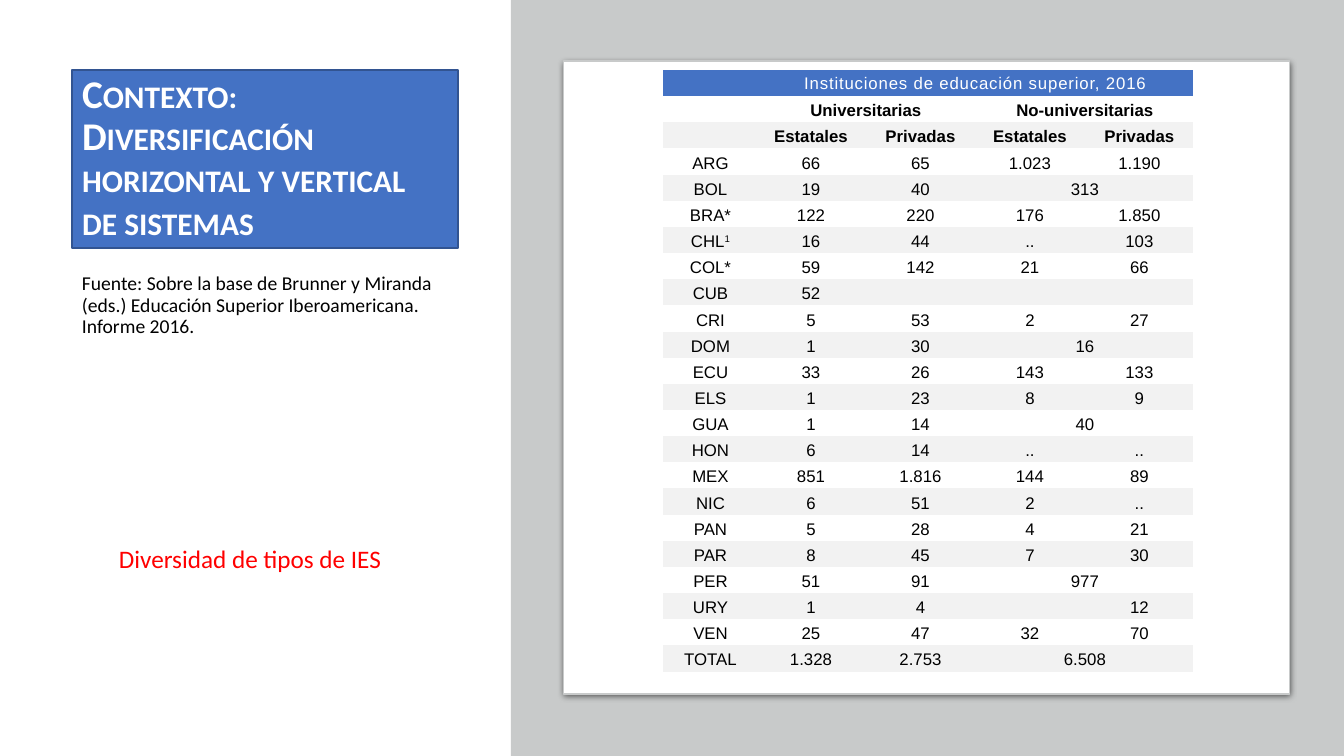
import pptx
import pptx.util
import pptx.dml.color
import pptx.enum.shapes
import pptx.enum.text
import pptx.oxml
import pptx.oxml.ns
from lxml import etree

PX = 914400 / 100.8
SHAPE = pptx.enum.shapes.MSO_SHAPE
ANCHOR = pptx.enum.text.MSO_ANCHOR
ALIGN = pptx.enum.text.PP_ALIGN
qn = pptx.oxml.ns.qn


def box(*lengths):
    """Turn px lengths into EMU."""
    return [pptx.util.Emu(round(n * PX)) for n in lengths]


def add_run(p, text, font, size, color, bold=False):
    r = p.add_run()
    r.text = text
    r.font.name = font
    r.font.size = pptx.util.Pt(size)
    r.font.bold = bold
    r.font.color.rgb = pptx.dml.color.RGBColor.from_string(color)
    return r


prs = pptx.Presentation()
prs.slide_width, prs.slide_height = box(1344, 756)
s = prs.slides.add_slide(prs.slide_layouts[5])

# Title
title = s.shapes.title
title.left, title.top, title.width, title.height = box(72, 70, 386, 178)
title.fill.solid()
title.fill.fore_color.rgb = pptx.dml.color.RGBColor.from_string("4472C4")
title.line.color.rgb = pptx.dml.color.RGBColor.from_string("325491")
title.line.width = pptx.util.Pt(1)
tf = title.text_frame
tf.word_wrap = True
tf.auto_size = pptx.enum.text.MSO_AUTO_SIZE.NONE
tf.vertical_anchor = ANCHOR.MIDDLE
p = tf.paragraphs[0]
p.alignment = ALIGN.LEFT
p.line_spacing = 0.9
r = add_run(p, "Contexto: Diversificación horizontal y vertical de sistemas",
            "Calibri", 28, "FFFFFF", True)
r.font._element.set("cap", "small")

# Source note
note = s.shapes.add_textbox(*box(72, 269, 386, 417))
note.text_frame.word_wrap = True
p = note.text_frame.paragraphs[0]
p.line_spacing = 0.9
p.space_after = pptx.util.Pt(6)
add_run(p, "Fuente: Sobre la base de Brunner y Miranda (eds.) Educación Superior "
        "Iberoamericana. Informe 2016.", "Calibri", 14, "000000")

# Grey panel and white card
panel = s.shapes.add_shape(SHAPE.RECTANGLE, *box(511, 0, 833, 756))
card = s.shapes.add_shape(SHAPE.ROUNDED_RECTANGLE, *box(564, 61, 726, 633))
card.adjustments[0] = 0
for sp, color in ((panel, "C8CACA"), (card, "FFFFFF")):
    sp.shadow.inherit = False
    sp.fill.solid()
    sp.fill.fore_color.rgb = pptx.dml.color.RGBColor.from_string(color)
panel.line.fill.background()
card.line.color.rgb = pptx.dml.color.RGBColor.from_string("C8CACA")
card.line.width = pptx.util.Pt(0.75)
effects = card._element.spPr.find(qn("a:effectLst"))
shadow = etree.SubElement(effects, qn("a:outerShdw"), blurRad="57150", dist="19050",
                          dir="5400000", algn="ctr", rotWithShape="0")
black = etree.SubElement(shadow, qn("a:srgbClr"), val="000000")
etree.SubElement(black, qn("a:alpha"), val="63000")

# Table: None continues the cell to its left
rows = [
    ["", "Instituciones de educación superior, 2016", None, None, None],
    ["", "Universitarias", None, "No-universitarias", None],
    ["", "Estatales", "Privadas", "Estatales", "Privadas"],
    ["ARG", "66", "65", "1.023", "1.190"],
    ["BOL", "19", "40", "313", None],
    ["BRA*", "122", "220", "176", "1.850"],
    ["CHL", "16", "44", "..", "103"],
    ["COL*", "59", "142", "21", "66"],
    ["CUB", "52", "", "", ""],
    ["CRI", "5", "53", "2", "27"],
    ["DOM", "1", "30", "16", None],
    ["ECU", "33", "26", "143", "133"],
    ["ELS", "1", "23", "8", "9"],
    ["GUA", "1", "14", "40", None],
    ["HON", "6", "14", "..", ".."],
    ["MEX", "851", "1.816", "144", "89"],
    ["NIC", "6", "51", "2", ".."],
    ["PAN", "5", "28", "4", "21"],
    ["PAR", "8", "45", "7", "30"],
    ["PER", "51", "91", "977", None],
    ["URY", "1", "4", "", "12"],
    ["VEN", "25", "47", "32", "70"],
    ["TOTAL", "1.328", "2.753", "6.508", None],
]
gf = s.shapes.add_table(len(rows), 5, *box(663, 70, 530, 589))
table = gf.table
table.first_row = False
table.horz_banding = False
style = next(gf._element.iter(qn("a:tableStyleId")))
style.text = "{2D5ABB26-0587-4C30-8999-92F81FD0307C}"
for column, width in zip(table.columns, box(92, 109, 110, 109, 110)):
    column.width = width
margins = box(3, 4, 0, 2)

for i, row in enumerate(rows):
    for j, text in enumerate(row):
        cell = table.cell(i, j)
        cell.margin_left, cell.margin_top, cell.margin_right, cell.margin_bottom = margins
        cell.vertical_anchor = ANCHOR.MIDDLE if i < 3 else ANCHOR.BOTTOM
        if i % 2:
            cell.fill.background()
        else:
            cell.fill.solid()
            cell.fill.fore_color.rgb = pptx.dml.color.RGBColor.from_string(
                "F2F2F2" if i else "4472C4")
        p = cell.text_frame.paragraphs[0]
        p.alignment = ALIGN.CENTER
        if text:
            r = add_run(p, text, "Arial", 12, "000000" if i else "FFFFFF", i in (1, 2))
            if i == 0:
                r.font._element.set("spc", "60")
            if text == "CHL":
                r = add_run(p, "1", "Arial", 12, "000000")
                r.font._element.set("baseline", "30000")
        else:
            etree.SubElement(p._p, qn("a:endParaRPr"), sz="1200")
        if text and None in row[j + 1:j + 2]:
            last = j + 1
            while last + 1 < len(row) and row[last + 1] is None:
                last += 1
            cell.merge(table.cell(i, last))

# Red remark
remark = s.shapes.add_textbox(*box(109, 538, 286, 40))
remark.text_frame.word_wrap = False
remark.text_frame.auto_size = pptx.enum.text.MSO_AUTO_SIZE.SHAPE_TO_FIT_TEXT
add_run(remark.text_frame.paragraphs[0], "Diversidad de tipos de IES", "Calibri", 18, "FF0000")

prs.save("out.pptx")
